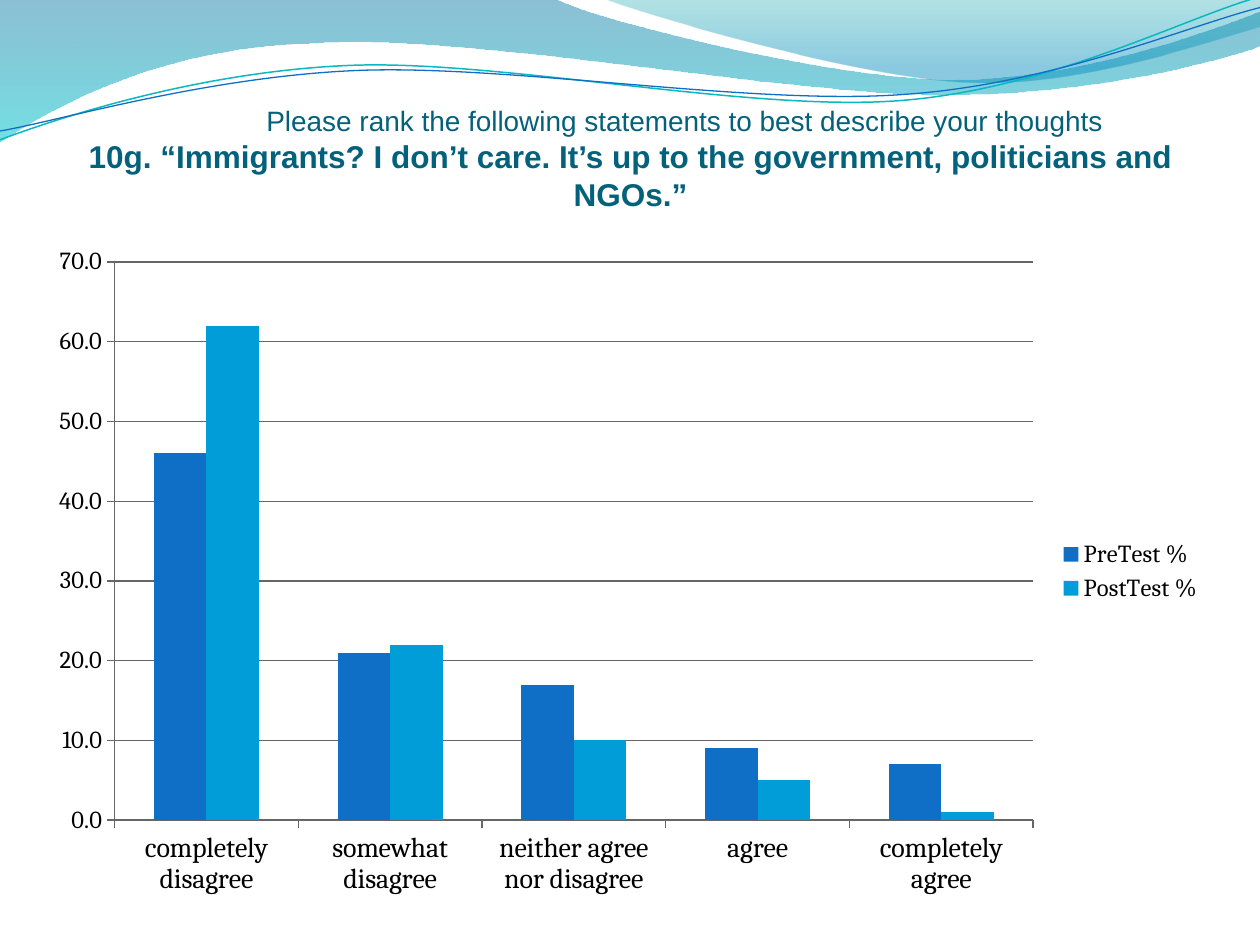
from pptx import Presentation
from pptx.chart.data import CategoryChartData
from pptx.dml.color import RGBColor
from pptx.enum.chart import XL_CHART_TYPE as Kind, XL_LEGEND_POSITION as Side, XL_TICK_MARK as Tick
from pptx.enum.text import MSO_ANCHOR as Anchor, PP_ALIGN as Align
from pptx.oxml import parse_xml
from pptx.oxml.ns import nsdecls
from pptx.util import Inches, Pt

HUES = {
    "title": "04617B", "text": "000000", "axis": "666666",
    "pre": "0F6FC6", "post": "009DD9",
    "teal": "0AB8BF", "blue": "0F6FC6",
    "deep": "0074A1", "aqua": "00C6CF", "mint": "00A1A9", "sky": "008BBF",
}

# Each outline: start point, then lines (one point) and Bezier curves (three points)
WAVE = [(0, 0), [(4.4, -0.01)],
        [(4.76, 0.17), (6.64, 0.63), (7.58, 0.63)],
        [(8.53, 0.63), (9.58, 0.26), (10, 0.09)], [(10.01, 0.36)],
        [(9.83, 0.44), (8.7, 0.76), (7.46, 0.75)],
        [(6.22, 0.75), (3.82, 0.28), (2.57, 0.34)],
        [(1.29, 0.36), (0.46, 0.83), (-0.01, 1.13)]]
CREST = [(4.79, -0.01),
         [(5.09, 0.11), (6.82, 0.62), (7.69, 0.65)],
         [(8.56, 0.69), (9.61, 0.32), (10, 0.21)], [(10, 0)]]
TEAL = [(0, 1.11),
        [(0.48, 0.93), (1.58, 0.57), (2.77, 0.52)],
        [(3.95, 0.47), (5.93, 0.89), (7.13, 0.8)],
        [(8.33, 0.71), (9.38, 0.15), (9.98, -0.02)]]
BLUE = [(0, 1.04),
        [(0.47, 0.96), (1.64, 0.61), (2.83, 0.56)],
        [(4.03, 0.51), (5.97, 0.84), (7.17, 0.75)],
        [(8.36, 0.67), (9.41, 0.21), (10, 0.06)]]


def color(name):
    return RGBColor.from_string(HUES[name])


def outline(slide, box, route, closed):
    """Freeform through the end points, with its curved legs made Bezier."""
    def spot(point):
        return box[0] + Inches(point[0]), box[1] + Inches(point[1])

    start, *legs = route
    pen = slide.shapes.build_freeform(*spot(start))
    pen.add_line_segments([spot(leg[-1]) for leg in legs], close=closed)
    shape = pen.convert_to_shape()
    shape.shadow.inherit = False
    for line, leg in zip(shape._element.findall(".//{*}lnTo"), legs):
        if len(leg) == 3:
            pts = "".join(f'<a:pt x="{x - shape.left}" y="{y - shape.top}"/>'
                          for x, y in map(spot, leg))
            line.getparent().replace(line, parse_xml(
                f'<a:cubicBezTo {nsdecls("a")}>{pts}</a:cubicBezTo>'))
    return shape


def fade(shape, stops):
    """Vertical gradient with transparent stops: (position, colour, opacity)."""
    rows = "".join(
        f'<a:gs pos="{pos * 1000}"><a:srgbClr val="{HUES[name]}">'
        f'<a:alpha val="{alpha * 1000}"/></a:srgbClr></a:gs>' for pos, name, alpha in stops)
    shape.line.fill.background()
    shape.fill.background()
    old = shape.fill._xPr.find("{*}noFill")
    old.getparent().replace(old, parse_xml(
        f'<a:gradFill {nsdecls("a")}><a:gsLst>{rows}</a:gsLst>'
        '<a:lin ang="5400000" scaled="0"/></a:gradFill>'))


def waves(slide, box):
    bands = ((WAVE, [(0, "deep", 45), (100, "aqua", 55)]),
             (CREST, [(0, "mint", 30), (80, "sky", 45)]))
    for route, stops in bands:
        fade(outline(slide, box, route, True), stops)
    for route, name, width in ((TEAL, "teal", 0.85), (BLUE, "blue", 0.75)):
        curve = outline(slide, box, route, False)
        curve.fill.background()
        curve.line.color.rgb = color(name)
        curve.line.width = Pt(width)


def style(font, size, name="text", face="Cambria", bold=False):
    font.size, font.name, font.bold = Pt(size), face, bold
    font.color.rgb = color(name)


def write(para, text, **form):
    run = para.add_run()
    run.text = text
    style(run.font, **form)


def heading(slide, box):
    frame = slide.shapes.add_textbox(*box).text_frame
    frame.word_wrap = True
    frame.vertical_anchor = Anchor.BOTTOM
    frame.margin_left = frame.margin_right = frame.margin_bottom = 0
    frame.margin_top = Inches(0.05)
    para = frame.paragraphs[0]
    para.alignment = Align.CENTER
    # Tab stop that shifts the first line right
    para._p.get_or_add_pPr().append(parse_xml(
        f'<a:tabLst {nsdecls("a")}><a:tab pos="{Inches(0.86)}" algn="l"/></a:tabLst>'))
    look = {"name": "title", "face": "Arial"}
    write(para, "\tPlease rank the following statements to best describe your thoughts",
          size=16, **look)
    para.add_line_break()
    write(para, "10g. “Immigrants? I don’t care. It’s up to the government, politicians and NGOs.”",
          size=18, bold=True, **look)


def results(slide, box):
    data = CategoryChartData(number_format="0.0")
    data.categories = ["completely disagree", "somewhat disagree",
                       "neither agree nor disagree", "agree", "completely agree"]
    data.add_series("PreTest %", [46, 21, 17, 9, 7])
    data.add_series("PostTest %", [62, 22, 10, 5, 1])
    chart = slide.shapes.add_chart(Kind.COLUMN_CLUSTERED, *box, data).chart
    style(chart.font, 10)
    chart.has_title = False

    # Bars
    plot = chart.plots[0]
    plot.gap_width, plot.overlap, plot.vary_by_categories = 150, 0, False
    for series, name in zip(plot.series, ("pre", "post")):
        series.format.fill.solid()
        series.format.fill.fore_color.rgb = color(name)

    # Axes and grid
    cat, val = chart.category_axis, chart.value_axis
    for axis, size in ((cat, 16), (val, 14)):
        style(axis.tick_labels.font, size)
        axis.major_tick_mark = Tick.OUTSIDE
        axis.minor_tick_mark = Tick.NONE
        axis.format.line.color.rgb = color("axis")
    val.minimum_scale, val.maximum_scale, val.major_unit = 0, 70, 10
    val.has_major_gridlines = True
    val.major_gridlines.format.line.color.rgb = color("axis")
    val.tick_labels.number_format = "0.0"
    val.tick_labels.number_format_is_linked = False

    # Legend
    chart.has_legend = True
    chart.legend.position = Side.RIGHT
    chart.legend.include_in_layout = False
    style(chart.legend.font, 14)

    # Plot area, given in inches within the chart and stored as shares of it
    area = chart._chartSpace.chart.plotArea
    for old in area.findall("{*}layout"):
        area.remove(old)
    wide, high = box[2:]
    sizes = "".join(f'<c:{tag} val="{Inches(size) / whole}"/>' for tag, size, whole in
                    (("x", 0.63, wide), ("y", 0.22, high), ("w", 7.29, wide), ("h", 4.43, high)))
    area.insert(0, parse_xml(
        f'<c:layout {nsdecls("c")}><c:manualLayout><c:layoutTarget val="inner"/>'
        f'<c:xMode val="edge"/><c:yMode val="edge"/>{sizes}</c:manualLayout></c:layout>'))


def main():
    deck = Presentation()
    deck.slide_width, deck.slide_height = Inches(10), Inches(7.5)
    slide = deck.slides.add_slide(deck.slide_layouts[6])
    waves(slide, (0, 0))
    heading(slide, [Inches(n) for n in (0.28, 0.68, 9.45, 1.01)])
    results(slide, [Inches(n) for n in (0.28, 1.86, 9.37, 5.35)])
    deck.save("out.pptx")


if __name__ == "__main__":
    main()
